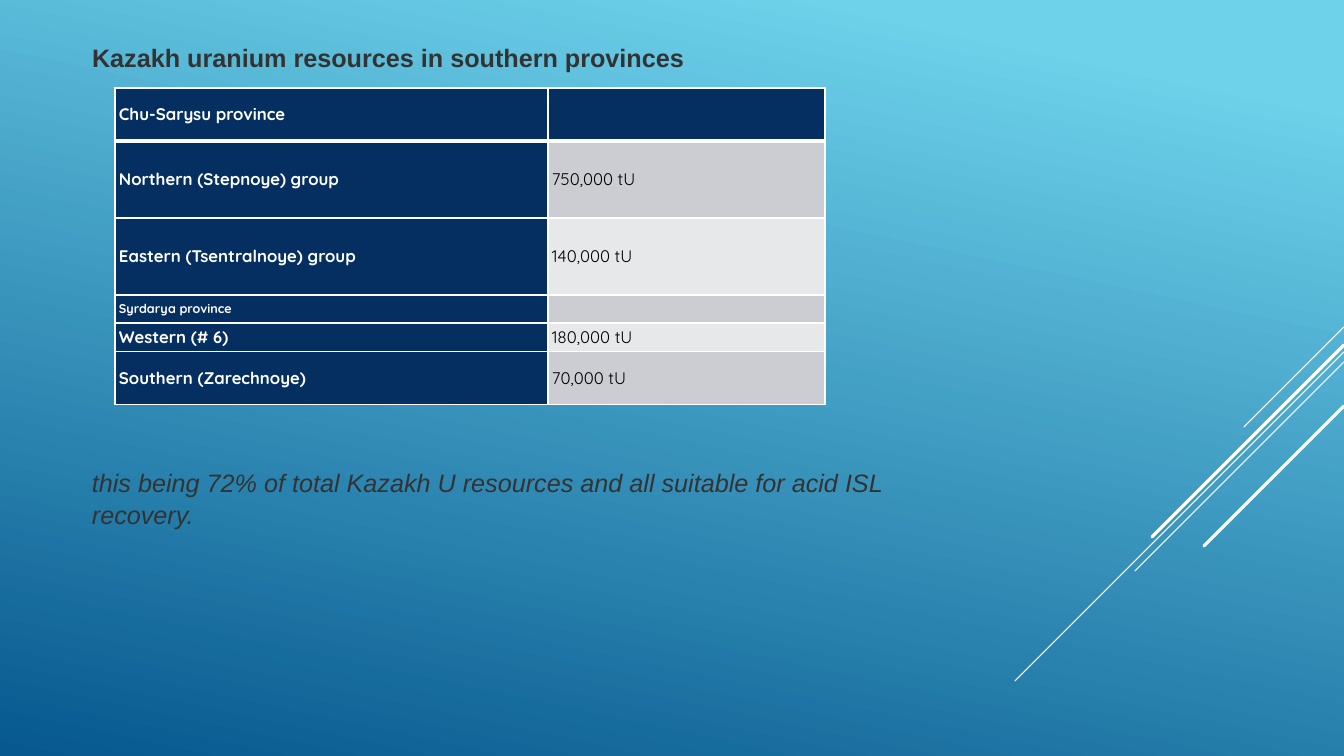
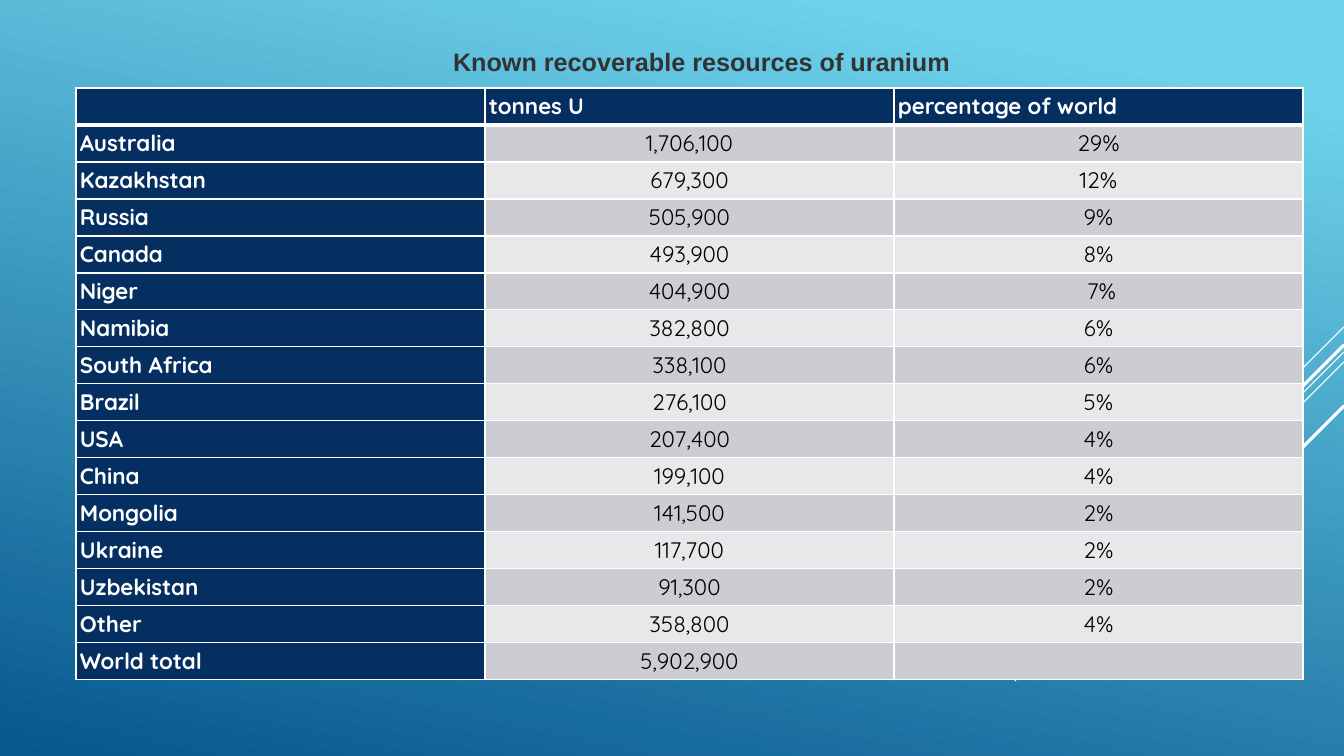
import dataclasses

import lxml.etree
import pptx
import pptx.dml.color
import pptx.enum.shapes
import pptx.enum.text
import pptx.oxml.ns
import pptx.util

SLIDE_WIDTH, SLIDE_HEIGHT = 1344, 756
EMU_PER_PX = 12192000 / SLIDE_WIDTH
TITLE_ONLY = 5
LEFT = pptx.enum.text.PP_ALIGN.LEFT
CENTER = pptx.enum.text.PP_ALIGN.CENTER


@dataclasses.dataclass(frozen=True)
class Theme:
    """Colours, fonts and type sizes of the presentation."""
    sky: str = "6ED2EB"
    deep: str = "06588E"
    navy: str = "052F61"
    band_dark: str = "CCCDD2"
    band_light: str = "E7E8EA"
    white: str = "FFFFFF"
    black: str = "000000"
    ink: str = "333333"
    text_font: str = "Arial"
    table_font: str = "Quicksand"
    text_size: float = 18
    thin: float = 0.75
    thick: float = 2.25
    border: float = 1
    header_border: float = 3


THEME = Theme()

STREAKS = [
    (327, 100, THEME.thin),
    (352, 329, THEME.thin),
    (362, 209, THEME.thin),
    (345, 192, THEME.thick),
    (406, 140, THEME.thick),
]

PROVINCES = [
    ("Chu-Sarysu province", ""),
    ("Northern (Stepnoye) group", "750,000 tU"),
    ("Eastern (Tsentralnoye) group", "140,000 tU"),
    ("Syrdarya province", ""),
    ("Western (# 6)", "180,000 tU"),
    ("Southern (Zarechnoye)", "70,000 tU"),
]

COUNTRIES = [
    ("", "tonnes U", "percentage of world"),
    ("Australia", "1,706,100", "29%"),
    ("Kazakhstan", "679,300", "12%"),
    ("Russia", "505,900", "9%"),
    ("Canada", "493,900", "8%"),
    ("Niger", "404,900", " 7%"),
    ("Namibia", "382,800", "6%"),
    ("South Africa", "338,100", "6%"),
    ("Brazil", "276,100", "5%"),
    ("USA", "207,400", "4%"),
    ("China", "199,100", "4%"),
    ("Mongolia", "141,500", "2%"),
    ("Ukraine", "117,700", "2%"),
    ("Uzbekistan", "91,300", "2%"),
    ("Other", "358,800", "4%"),
    ("World total", "5,902,900", ""),
]


def px(length):
    """Turn px into EMU."""
    return pptx.util.Emu(round(length * EMU_PER_PX))


def rgb(code):
    """Turn a hex code into a colour."""
    return pptx.dml.color.RGBColor.from_string(code)


def apply_format(target, values):
    """Set each named attribute of the target."""
    for name, value in values.items():
        setattr(target, name, value)


def format_font(font, color, **values):
    """Set the colour and other values of a font."""
    apply_format(font, values)
    font.color.rgb = rgb(color)


def set_background(master):
    """Give every slide the blue gradient."""
    fill = master.background.fill
    fill.gradient()
    fill.gradient_angle = 360 - 102
    stops = [(0.1, THEME.sky), (1, THEME.deep)]
    for stop, (position, color) in zip(fill.gradient_stops, stops):
        stop.position = position
        stop.color.rgb = rgb(color)


def add_streaks(slide):
    """Draw the diagonal lines that run in from the right edge."""
    for top, length, weight in STREAKS:
        connector = slide.shapes.add_connector(
            pptx.enum.shapes.MSO_CONNECTOR.STRAIGHT,
            px(SLIDE_WIDTH), px(top), px(SLIDE_WIDTH - length), px(top + length))
        connector.line.color.rgb = rgb(THEME.white)
        connector.line.width = pptx.util.Pt(weight)
        properties = connector._element.spPr
        properties.find(pptx.oxml.ns.qn("a:ln")).set("cap", "rnd")
        lxml.etree.SubElement(properties, pptx.oxml.ns.qn("a:effectLst"))


def write_text(shape, box, text, wrap=True, **font_values):
    """Place a text shape and write its one paragraph."""
    left, top, width, height = map(px, box)
    apply_format(shape, {"left": left, "top": top, "width": width, "height": height})
    frame = shape.text_frame
    apply_format(frame, {
        "text": text,
        "word_wrap": wrap,
        "auto_size": pptx.enum.text.MSO_AUTO_SIZE.NONE,
        "vertical_anchor": pptx.enum.text.MSO_ANCHOR.TOP,
    })
    paragraph = frame.paragraphs[0]
    apply_format(paragraph, {"alignment": LEFT, "line_spacing": 1.07})
    format_font(paragraph.runs[0].font, THEME.ink, name=THEME.text_font,
                size=pptx.util.Pt(THEME.text_size), **font_values)


def add_titled_slide(presentation, title, box, wrap=True):
    """Add a slide with its title and streaks."""
    slide = presentation.slides.add_slide(presentation.slide_layouts[TITLE_ONLY])
    write_text(slide.shapes.title, box, title, wrap, bold=True)
    add_streaks(slide)
    return slide


def add_note(slide, box, text):
    """Add an italic remark."""
    write_text(slide.shapes.add_textbox(0, 0, 0, 0), box, text, italic=True)


def set_borders(cell, top, bottom):
    """Draw white borders round a cell, with given top and bottom weights."""
    properties = cell._tc.get_or_add_tcPr()
    weights = {"L": THEME.border, "R": THEME.border, "T": top, "B": bottom}
    for side, weight in weights.items():
        line = lxml.etree.SubElement(properties, pptx.oxml.ns.qn(f"a:ln{side}"),
                                     w=str(pptx.util.Pt(weight)))
        fill = lxml.etree.SubElement(line, pptx.oxml.ns.qn("a:solidFill"))
        lxml.etree.SubElement(fill, pptx.oxml.ns.qn("a:srgbClr"), val=THEME.white)


def write_cell(cell, text, size, is_heading, alignment):
    """Write the text of a table cell."""
    apply_format(cell, {
        "vertical_anchor": pptx.enum.text.MSO_ANCHOR.MIDDLE,
        "margin_left": px(4), "margin_right": px(4),
        "margin_top": px(2), "margin_bottom": px(2),
    })
    paragraph = cell.text_frame.paragraphs[0]
    paragraph.alignment = alignment
    if text:
        run = paragraph.add_run()
        run.text = text
        format_font(run.font, THEME.white if is_heading else THEME.black,
                    name=THEME.table_font, size=pptx.util.Pt(size), bold=is_heading)
    else:
        lxml.etree.SubElement(paragraph._p, pptx.oxml.ns.qn("a:endParaRPr"),
                              sz=str(size * 100))


def add_banded_table(slide, left, top, widths, heights, rows, size,
                     alignment=LEFT, row_sizes=None):
    """Add a table with navy headings and grey bands."""
    table = slide.shapes.add_table(
        len(rows), len(widths), px(left), px(top),
        px(sum(widths)), px(sum(heights))).table
    table.horz_banding = False
    for column, width in zip(table.columns, widths):
        column.width = px(width)
    for row_index, texts in enumerate(rows):
        table.rows[row_index].height = px(heights[row_index])
        row_size = (row_sizes or {}).get(row_index, size)
        band = THEME.band_dark if row_index % 2 else THEME.band_light
        for column_index, text in enumerate(texts):
            cell = table.cell(row_index, column_index)
            is_heading = row_index == 0 or column_index == 0
            set_borders(cell,
                        THEME.header_border if row_index == 1 else THEME.border,
                        THEME.header_border if row_index == 0 else THEME.border)
            cell.fill.solid()
            cell.fill.fore_color.rgb = rgb(THEME.navy if is_heading else band)
            write_cell(cell, text, row_size, is_heading,
                       LEFT if is_heading else alignment)


def add_provinces_slide(presentation):
    """Build the slide on the southern provinces."""
    slide = add_titled_slide(
        presentation, "Kazakh uranium resources in southern provinces",
        (82, 35, 1130, 40))
    add_banded_table(slide, 115, 88, [433, 277], [53, 77, 77, 28, 29, 53],
                     PROVINCES, size=12, row_sizes={3: 9})
    add_note(slide, (82, 460, 820, 72),
             "this being 72% of total Kazakh U resources and all suitable "
             "for acid ISL recovery.")


def add_countries_slide(presentation):
    """Build the slide on resources by country."""
    slide = add_titled_slide(
        presentation, "Known recoverable resources of uranium",
        (443, 39, 522, 40), wrap=False)
    add_banded_table(slide, 76, 88, [409] * 3, [37] * len(COUNTRIES),
                     COUNTRIES, size=16, alignment=CENTER)


def main():
    """Build and save the presentation."""
    presentation = pptx.Presentation()
    apply_format(presentation, {"slide_width": px(SLIDE_WIDTH),
                                "slide_height": px(SLIDE_HEIGHT)})
    set_background(presentation.slide_master)
    add_provinces_slide(presentation)
    add_countries_slide(presentation)
    presentation.save("out.pptx")


if __name__ == "__main__":
    main()
